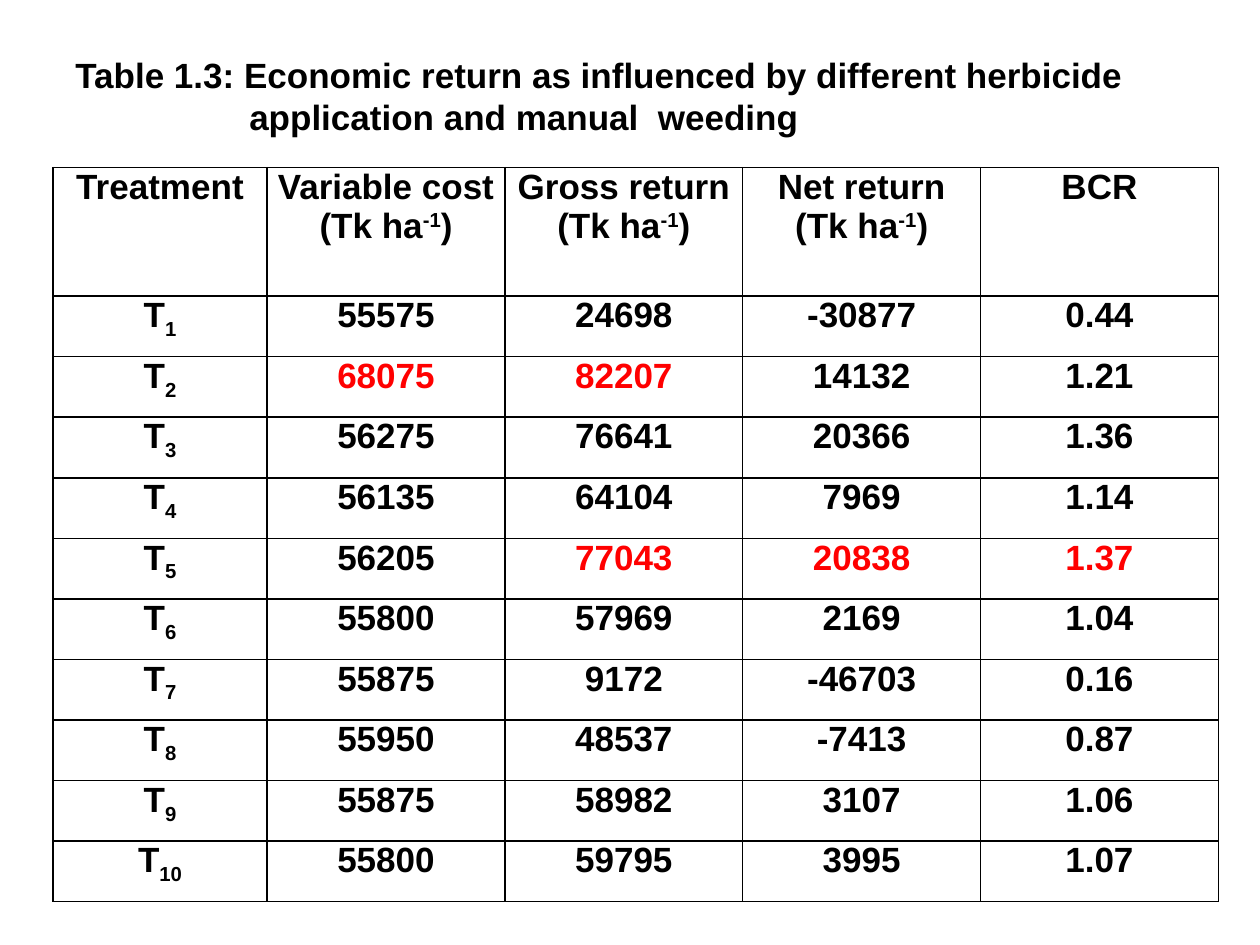
from lxml import etree
from pptx import Presentation
from pptx.dml.color import RGBColor
from pptx.enum.text import MSO_ANCHOR as Anchor, PP_ALIGN as Align
from pptx.oxml import parse_xml
from pptx.oxml.ns import nsdecls
from pptx.util import Inches, Pt

BLACK = RGBColor(0, 0, 0)
RED = RGBColor(0xFF, 0, 0)

TITLE_LINES = [
    "Table 1.3: Economic return as influenced by different herbicide",
    "application and manual  weeding",
]
HEADERS = ["Treatment", "Variable cost", "Gross return", "Net return", "BCR"]
UNIT = [("(Tk ha", 0), ("-1", 30), (")", 0)]
UNIT_COLUMNS = (1, 2, 3)
RESULTS = [
    ("55575", "24698", "-30877", "0.44"),
    ("68075", "82207", "14132", "1.21"),
    ("56275", "76641", "20366", "1.36"),
    ("56135", "64104", "7969", "1.14"),
    ("56205", "77043", "20838", "1.37"),
    ("55800", "57969", "2169", "1.04"),
    ("55875", "9172", "-46703", "0.16"),
    ("55950", "48537", "-7413", "0.87"),
    ("55875", "58982", "3107", "1.06"),
    ("55800", "59795", "3995", "1.07"),
]
HIGHLIGHTS = {(2, 1), (2, 2), (5, 2), (5, 3), (5, 4)}  # (row, column)


def add_run(paragraph, text, color=BLACK, baseline=0):
    run = paragraph.add_run()
    run.text = text
    run.font.name = "Arial"
    run.font.size = Pt(20)
    run.font.bold = True
    run.font.color.rgb = color
    if baseline:
        run.font._element.set("baseline", str(baseline * 1000))


def add_title(slide, left, top, width, height):
    text_frame = slide.shapes.add_textbox(left, top, width, height).text_frame
    text_frame.word_wrap = True
    text_frame.vertical_anchor = Anchor.MIDDLE
    first, second = text_frame.paragraphs[0], text_frame.add_paragraph()
    for paragraph, line in zip((first, second), TITLE_LINES):
        add_run(paragraph, line)
    # The second line hangs under the caption text
    second._p.get_or_add_pPr().set("marL", str(Inches(1.38)))


def add_borders(cell):
    properties = cell._tc.get_or_add_tcPr()
    for side in ("lnL", "lnR", "lnT", "lnB"):
        properties.append(parse_xml(
            f'<a:{side} {nsdecls("a")} w="{Pt(1)}"><a:solidFill>'
            f'<a:srgbClr val="{BLACK}"/></a:solidFill></a:{side}>'))


def fill_cell(cell, lines, color=BLACK):
    """Each line is a list of (text, baseline percent) pieces."""
    add_borders(cell)
    cell.fill.background()
    cell.margin_left = cell.margin_right = Inches(0.07)
    cell.margin_top = cell.margin_bottom = 0
    text_frame = cell.text_frame
    for index, pieces in enumerate(lines):
        paragraph = text_frame.add_paragraph() if index else text_frame.paragraphs[0]
        paragraph.alignment = Align.CENTER
        for text, baseline in pieces:
            add_run(paragraph, text, color, baseline)


def add_results_table(slide, left, top, width, height):
    row_count, column_count = len(RESULTS) + 1, len(HEADERS)
    table = slide.shapes.add_table(
        row_count, column_count, left, top, width, height).table
    table.first_row = table.horz_banding = False

    # One narrower first column and a taller header; the rest share evenly
    first_width, header_height = Inches(1.7), Inches(1.02)
    for index, column in enumerate(table.columns):
        column.width = (width - first_width) // (column_count - 1) if index else first_width
    for index, row in enumerate(table.rows):
        row.height = (height - header_height) // (row_count - 1) if index else header_height

    # Header row
    for column, header in enumerate(HEADERS):
        lines = [[(header, 0)]]
        if column in UNIT_COLUMNS:
            lines.append(UNIT)
        fill_cell(table.cell(0, column), lines)

    # Treatment rows
    for row, values in enumerate(RESULTS, start=1):
        fill_cell(table.cell(row, 0), [[("T", 0), (str(row), -25)]])
        for column, value in enumerate(values, start=1):
            color = RED if (row, column) in HIGHLIGHTS else BLACK
            fill_cell(table.cell(row, column), [[(value, 0)]], color)


def main():
    presentation = Presentation()
    presentation.slide_width = Inches(10)
    presentation.slide_height = Inches(7.5)
    slide = presentation.slides.add_slide(presentation.slide_layouts[6])
    add_results_table(slide, Inches(0.42), Inches(1.33), Inches(9.25), Inches(5.83))
    add_title(slide, Inches(0.5), Inches(0.42), Inches(9.08), Inches(0.67))
    presentation.save("out.pptx")


if __name__ == "__main__":
    main()
